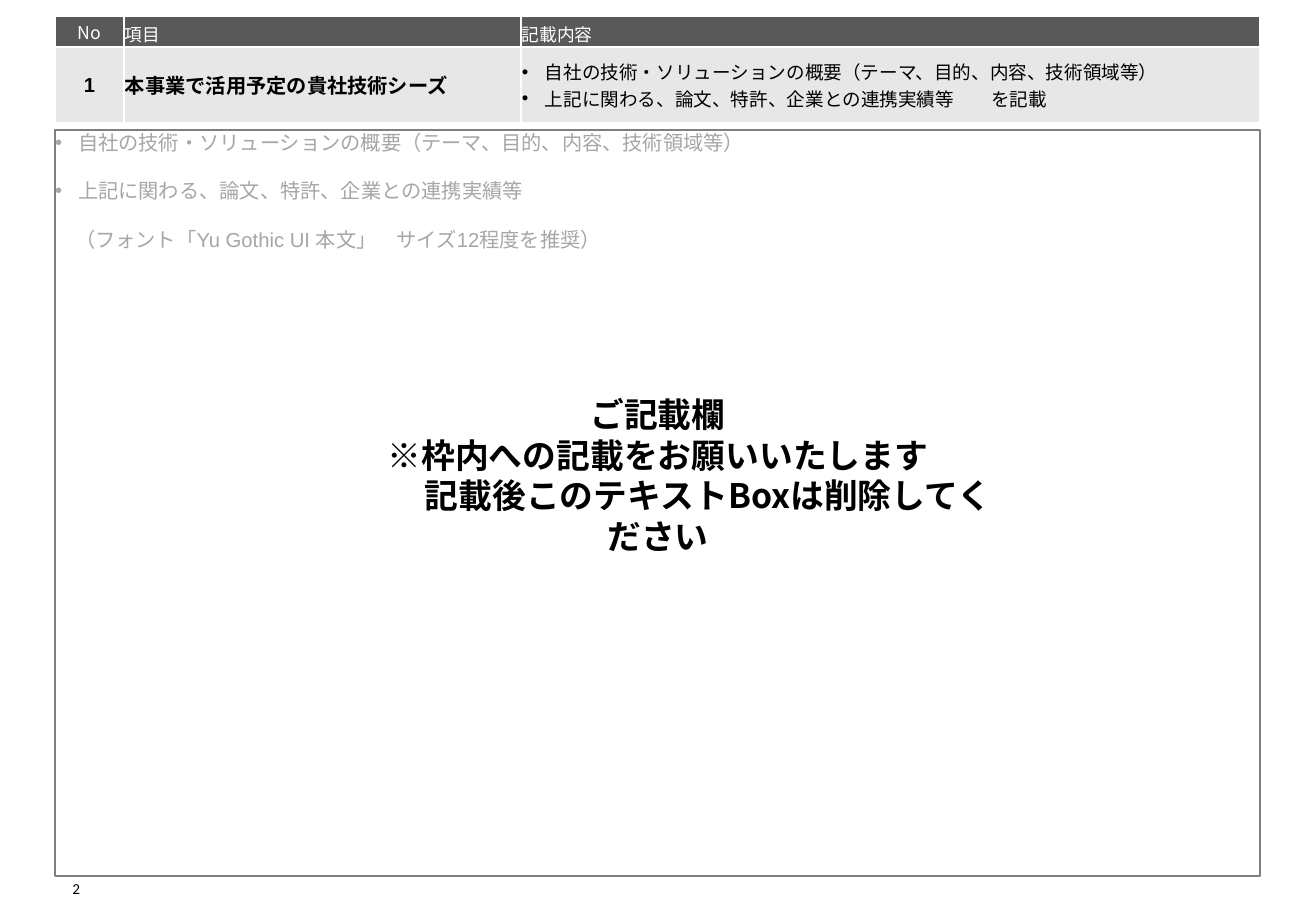
import pptx
import pptx.dml.color
import pptx.enum.lang
import pptx.enum.shapes
import pptx.enum.text
import pptx.oxml
import pptx.oxml.ns
import pptx.util

RGBColor = pptx.dml.color.RGBColor
ALIGN = pptx.enum.text.PP_ALIGN
ANCHOR = pptx.enum.text.MSO_ANCHOR

BLACK = RGBColor(0x00, 0x00, 0x00)
WHITE = RGBColor(0xFF, 0xFF, 0xFF)
HEADER_GRAY = RGBColor(0x59, 0x59, 0x59)
BODY_GRAY = RGBColor(0xE7, 0xE7, 0xE7)
FRAME_GRAY = RGBColor(0x80, 0x80, 0x80)
HINT_GRAY = RGBColor(0xA6, 0xA6, 0xA6)
GOTHIC = "Noto Sans CJK JP"

EMU_PER_PX = 914400 / 121.5
BULLET_INDENT = 23

OUTLINE = "自社の技術・ソリューションの概要（テーマ、目的、内容、技術領域等）"
RECORDS = "上記に関わる、論文、特許、企業との連携実績等"


def px(length):
    return pptx.util.Emu(round(length * EMU_PER_PX))


def add_xml(parent, tag, **attributes):
    child = parent.makeelement(pptx.oxml.ns.qn(tag), attributes)
    parent.append(child)
    return child


def indent(paragraph, left, first):
    properties = paragraph._p.get_or_add_pPr()
    properties.set("marL", str(px(left)))
    properties.set("indent", str(px(first)))
    return properties


def write(frame, lines, size, color, font="Arial", bold=False, align=ALIGN.LEFT, bullets=False):
    """Fill a text frame with one paragraph per line and return the paragraphs."""
    for number, line in enumerate(lines):
        paragraph = frame.paragraphs[0] if number == 0 else frame.add_paragraph()
        paragraph.alignment = align
        if bullets:
            properties = indent(paragraph, BULLET_INDENT, -BULLET_INDENT)
            add_xml(properties, "a:buFont", typeface="Arial")
            add_xml(properties, "a:buChar", char="•")
        run = paragraph.add_run()
        run.text = line
        run.font.name = font
        run.font.size = pptx.util.Pt(size)
        run.font.bold = bold
        run.font.color.rgb = color
        run.font.language_id = pptx.enum.lang.MSO_LANGUAGE_ID.JAPANESE
        add_xml(run._r.get_or_add_rPr(), "a:ea", typeface=GOTHIC)
    return frame.paragraphs


def set_margins(target, left, top, right, bottom):
    target.margin_left, target.margin_top = px(left), px(top)
    target.margin_right, target.margin_bottom = px(right), px(bottom)


def format_cell(cell, fill, centered):
    set_margins(cell, 1, *((1, 1, 0) if centered else (5, 1, 5)))
    cell.vertical_anchor = ANCHOR.MIDDLE
    properties = cell._tc.get_or_add_tcPr()
    for side in ("a:lnL", "a:lnR", "a:lnT", "a:lnB"):
        line = add_xml(properties, side, w=str(pptx.util.Pt(1)))
        add_xml(add_xml(line, "a:solidFill"), "a:srgbClr", val=str(WHITE))
    cell.fill.solid()
    cell.fill.fore_color.rgb = fill


def add_item_table(slide):
    table = slide.shapes.add_table(2, 3, px(55), px(16), px(1205), px(107)).table
    for column, width in zip(table.columns, (69, 397, 739)):
        column.width = px(width)
    for row, height in zip(table.rows, (31, 76)):
        row.height = px(height)
    for row, fill in enumerate((HEADER_GRAY, BODY_GRAY)):
        for column in range(3):
            format_cell(table.cell(row, column), fill, centered=column == 0)

    header = (("No", GOTHIC, ALIGN.CENTER), ("項目", GOTHIC, ALIGN.LEFT),
              ("記載内容", "Arial", ALIGN.LEFT))
    for column, (text, font, align) in enumerate(header):
        write(table.cell(0, column).text_frame, [text], 10.5, WHITE, font, align=align)
    write(table.cell(1, 0).text_frame, ["1"], 12, BLACK, bold=True, align=ALIGN.CENTER)
    write(table.cell(1, 1).text_frame, ["本事業で活用予定の貴社技術シーズ"], 12, BLACK, bold=True)
    write(table.cell(1, 2).text_frame, [OUTLINE, RECORDS + "　　を記載"], 11, BLACK, bullets=True)


def add_entry_frame(slide):
    shape = slide.shapes.add_shape(
        pptx.enum.shapes.MSO_SHAPE.RECTANGLE, px(55), px(130), px(1205), px(746))
    shape.shadow.inherit = False
    shape.fill.background()
    shape.line.color.rgb = FRAME_GRAY
    shape.line.width = pptx.util.Pt(1)
    frame = shape.text_frame
    frame.word_wrap = True
    frame.vertical_anchor = ANCHOR.TOP
    set_margins(frame, 0, 0, 0, 0)
    write(frame, [OUTLINE, RECORDS], 12, HINT_GRAY, bullets=True)
    font_hint = frame.add_paragraph()
    indent(font_hint, 20, 0)
    hint_run = font_hint.add_run()
    hint_run.text = "（フォント「Yu Gothic UI 本文」　サイズ12程度を推奨）"
    hint_run.font.name = "Arial"
    hint_run.font.size = pptx.util.Pt(12)
    hint_run.font.color.rgb = HINT_GRAY
    hint_run.font.language_id = pptx.enum.lang.MSO_LANGUAGE_ID.JAPANESE
    add_xml(hint_run._r.get_or_add_rPr(), "a:ea", typeface=GOTHIC)
    for number, paragraph in enumerate(frame.paragraphs):
        paragraph.alignment = ALIGN.LEFT
        paragraph.line_spacing = pptx.util.Pt(14.4)
        if number:
            paragraph.space_before = pptx.util.Pt(14.4)


def add_text_box(slide, left, top, width, height, wrap=True):
    frame = slide.shapes.add_textbox(px(left), px(top), px(width), px(height)).text_frame
    frame.word_wrap = wrap
    return frame


def add_notice(slide):
    frame = add_text_box(slide, 305, 388, 706, 135)
    paragraphs = write(
        frame,
        ["ご記載欄", "※枠内への記載をお願いいたします", "記載後このテキストBoxは削除してください"],
        20, BLACK, GOTHIC, bold=True, align=ALIGN.CENTER)
    indent(paragraphs[-1], 0, 100)


def add_page_number(slide):
    frame = add_text_box(slide, 56, 875, 24, 23, wrap=False)
    frame.vertical_anchor = ANCHOR.BOTTOM
    set_margins(frame, 0, 0, 0, 0)
    write(frame, ["2"], 9, BLACK, "Calibri", align=ALIGN.RIGHT)


def main():
    presentation = pptx.Presentation()
    presentation.slide_width, presentation.slide_height = px(1316), px(911)
    slide = presentation.slides.add_slide(presentation.slide_layouts[6])
    add_page_number(slide)
    add_item_table(slide)
    add_entry_frame(slide)
    add_notice(slide)
    presentation.save("out.pptx")


if __name__ == "__main__":
    main()
